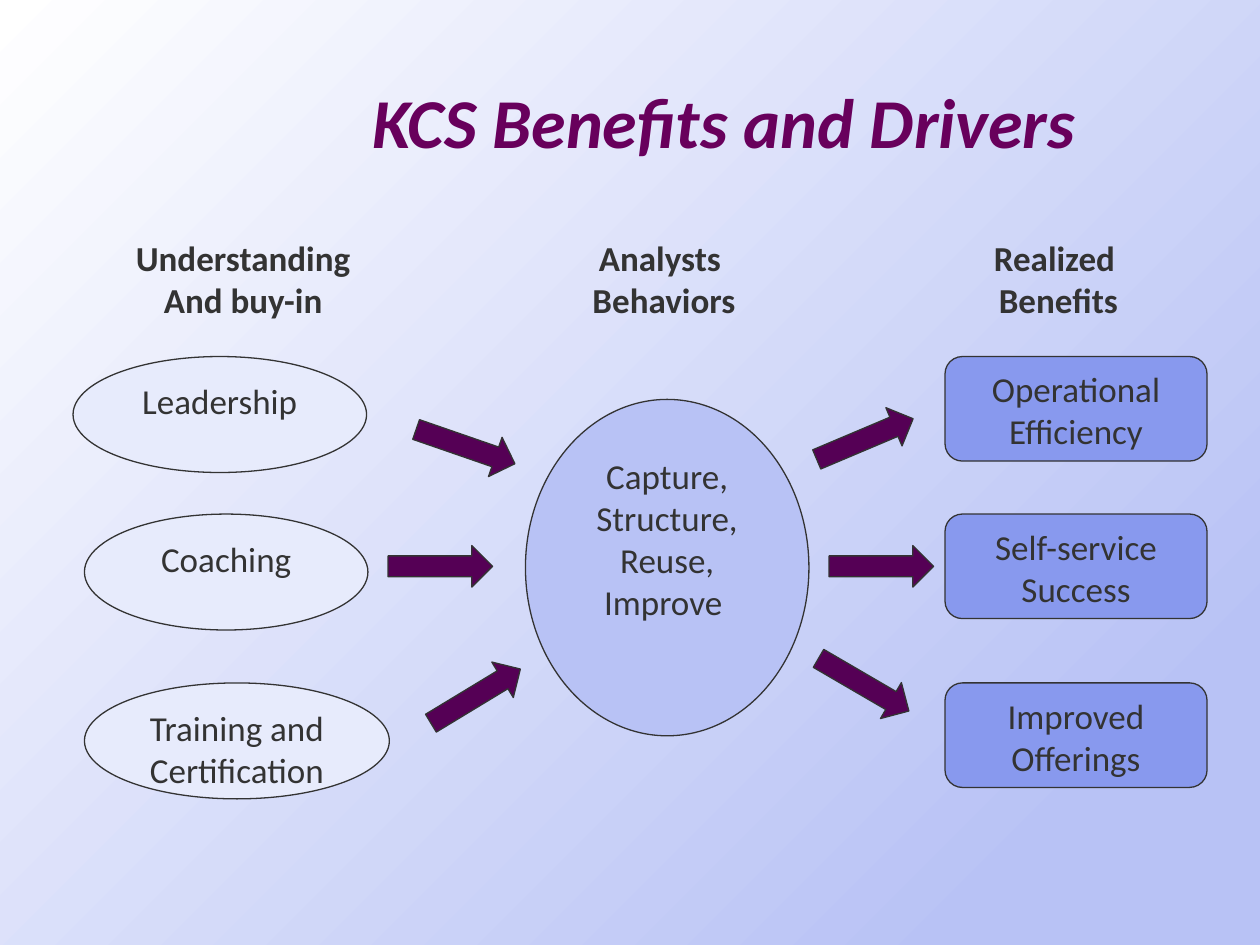
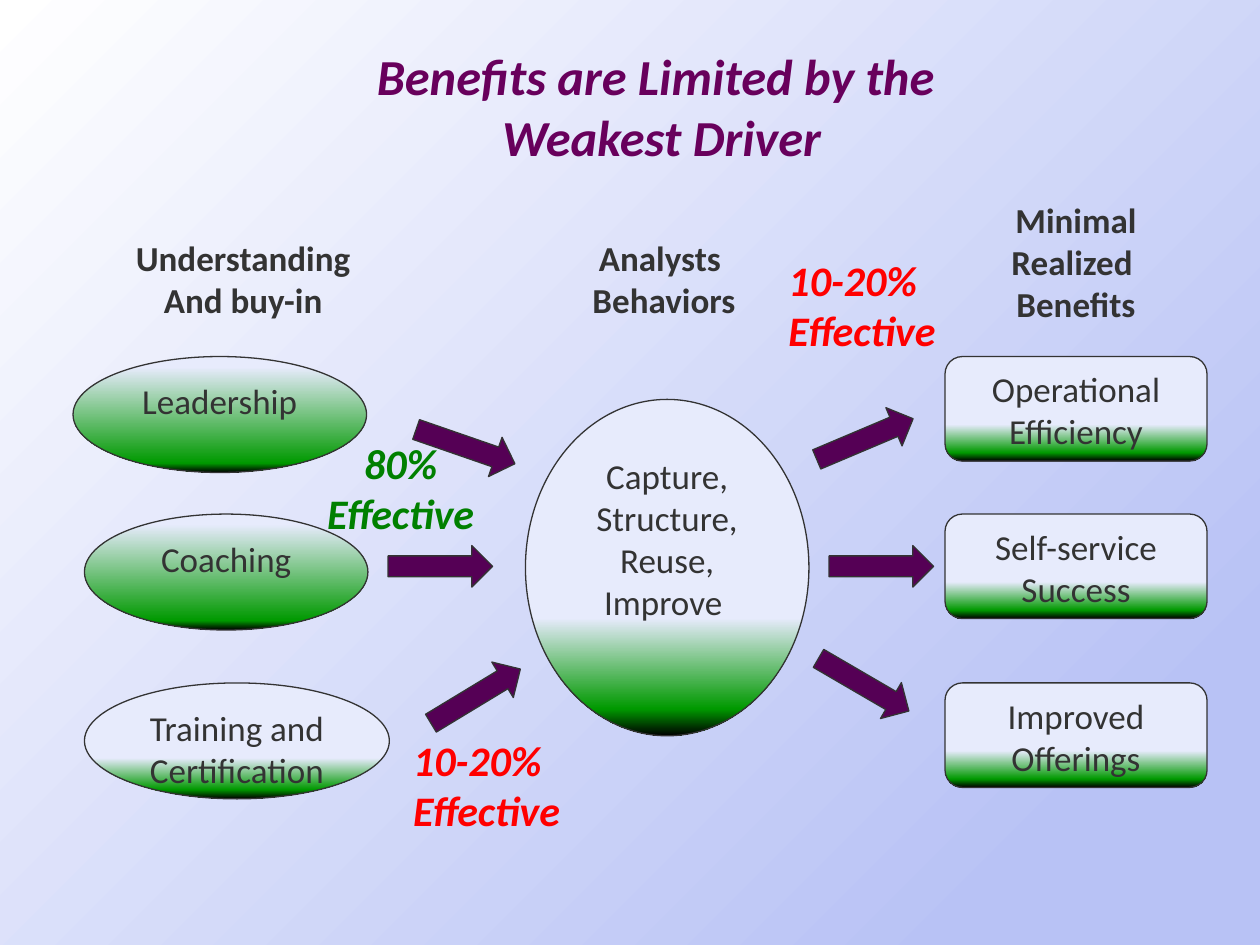
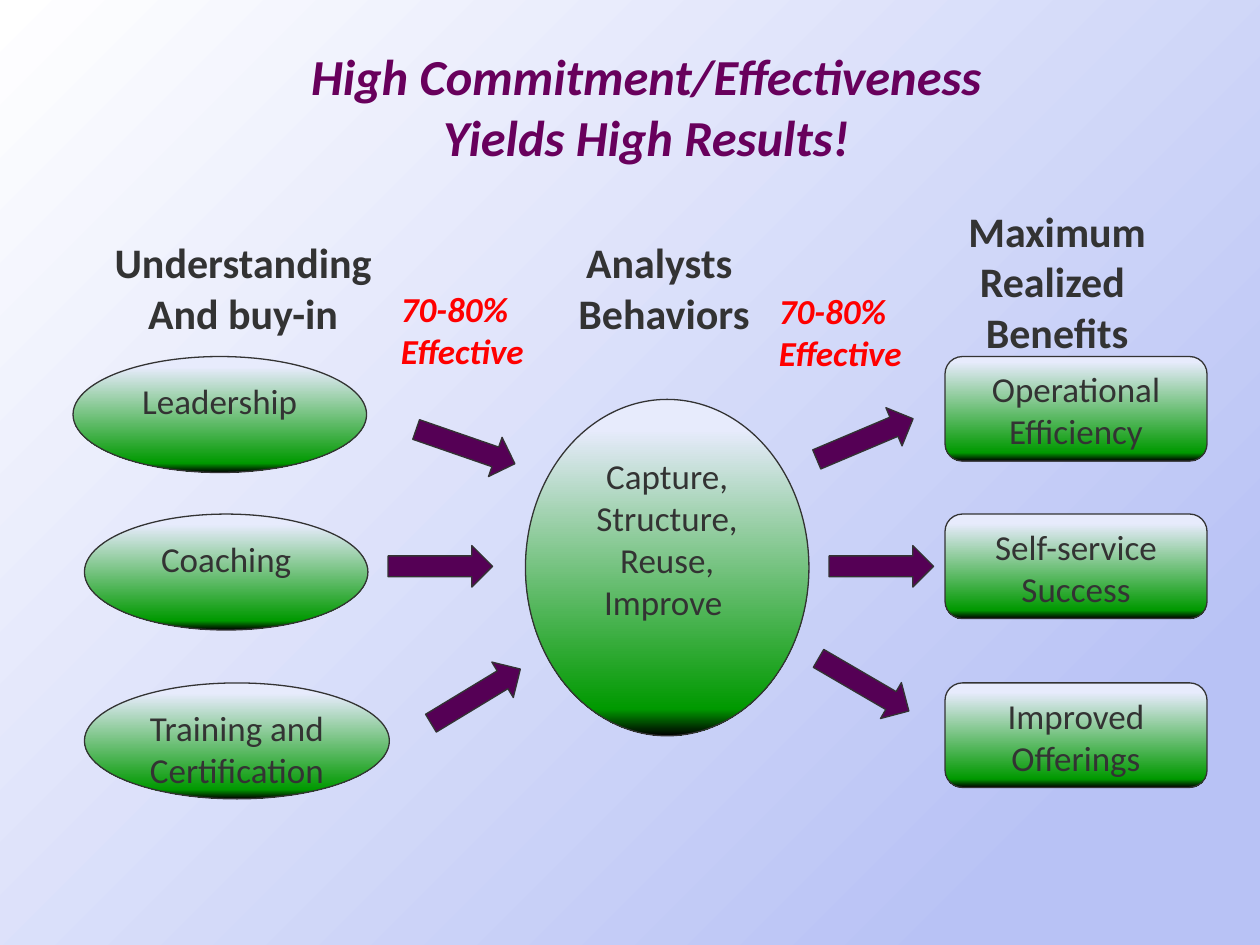
"""Build three slides on the drivers and benefits of KCS."""
from dataclasses import dataclass

from lxml.etree import SubElement
from pptx import Presentation
from pptx.dml.color import RGBColor
from pptx.enum.shapes import MSO_SHAPE
from pptx.enum.text import MSO_ANCHOR, MSO_AUTO_SIZE, PP_ALIGN
from pptx.oxml.ns import qn
from pptx.util import Inches, Pt


@dataclass(frozen=True)
class Theme:
    font: str = "Calibri"
    title: str = "68005C"
    text: str = "333333"
    arrow: str = "550055"
    benefit: str = "8899EE"
    behavior: str = "B8C2F5"
    driver: str = "E7EBFC"
    level: str = "009900"
    base: str = "000000"
    page: str = "FFFFFF"
    strong: str = "008000"
    alert: str = "FF0000"
    title_size: float = 40
    long_title_size: float = 28.8
    body_size: float = 20
    large_size: float = 24


THEME = Theme()


@dataclass(frozen=True)
class Box:
    left: float
    top: float
    width: float
    height: float


@dataclass(frozen=True)
class Gradient:
    stops: tuple[tuple[int, str], ...]
    from_corner: bool = False


Fill = str | Gradient


@dataclass(frozen=True)
class Node:
    text: str
    box: Box


@dataclass(frozen=True)
class Arrow:
    left: float
    top: float
    angle: float = 0


@dataclass(frozen=True)
class Label:
    text: str
    center: float
    top: float
    em_width: float
    size: float = THEME.body_size
    color: str = THEME.text
    italic: bool = False
    align: PP_ALIGN = PP_ALIGN.CENTER


@dataclass(frozen=True)
class DriverSlide:
    title: str
    title_box: Box
    title_size: float
    driver_fills: tuple[Fill, ...]
    behavior_fill: Fill
    benefit_fills: tuple[Fill, ...]
    labels: tuple[Label, ...]


ROWS = (2.83, 4.08, 5.42)
DRIVERS = (
    Node("Leadership", Box(0.58, ROWS[0], 2.33, 0.92)),
    Node("Coaching", Box(0.67, ROWS[1], 2.25, 0.92)),
    Node("Training and Certification", Box(0.67, ROWS[2], 2.42, 0.92)),
)
BEHAVIOR = Node("Capture, Structure, Reuse, Improve ", Box(4.17, 3.17, 2.25, 2.67))
BENEFITS = tuple(
    Node(text, Box(7.5, top, 2.08, 0.83))
    for text, top in zip(
        ("Operational Efficiency", "Self-service\nSuccess", "Improved\nOfferings"), ROWS
    )
)
ARROWS = (
    Arrow(3.28, 3.38, 19.1),
    Arrow(3.08, 4.33),
    Arrow(3.36, 5.36, 328.8),
    Arrow(6.45, 3.32, 337.1),
    Arrow(6.58, 4.33),
    Arrow(6.44, 5.27, 30.2),
)


def filled_from(start: int) -> Gradient:
    """Return a green level whose fade begins at the given percentage."""
    return Gradient(
        ((0, THEME.driver), (start, THEME.driver), (92, THEME.level), (100, THEME.base))
    )


def headings(
    benefits: str, center: float, top: float, em_width: float, size: float = THEME.body_size
) -> tuple[Label, ...]:
    """Return the three column headings, with the last one as given."""
    return (
        Label("Understanding\nAnd buy-in", 1.93, 1.83, 6.59, size),
        Label("Analysts \nBehaviors", 5.27, 1.83, 4.28, size),
        Label(benefits, center, top, em_width, size),
    )


def effect(
    share: str,
    center: float,
    top: float,
    size: float,
    color: str = THEME.alert,
    align: PP_ALIGN = PP_ALIGN.LEFT,
) -> Label:
    """Return an italic note on how effective a part is."""
    return Label(f"{share}\nEffective", center, top, 4.08, size, color, True, align)


LOW, HIGH = filled_from(65), filled_from(9)
SLIDES = (
    DriverSlide(
        "KCS Benefits and Drivers",
        Box(2.33, 0.33, 6.83, 1.25),
        THEME.title_size,
        (THEME.driver,) * 3,
        THEME.behavior,
        (THEME.benefit,) * 3,
        headings("Realized \nBenefits", 8.4, 1.83, 3.78),
    ),
    DriverSlide(
        "Benefits are Limited by the \nWeakest Driver",
        Box(1.5, 0.38, 7.5, 0.92),
        THEME.long_title_size,
        (HIGH, HIGH, LOW),
        LOW,
        (LOW,) * 3,
        headings("Minimal\nRealized \nBenefits", 8.54, 1.53, 3.78)
        + (
            effect("10-20%", 3.96, 5.78, THEME.large_size),
            effect("10-20%", 6.94, 1.97, THEME.large_size),
            effect("80%", 3.18, 3.42, THEME.large_size, THEME.strong, PP_ALIGN.CENTER),
        ),
    ),
    DriverSlide(
        "High Commitment/Effectiveness\nYields High Results!",
        Box(1.38, 0.38, 7.5, 0.92),
        THEME.long_title_size,
        (HIGH,) * 3,
        HIGH,
        (filled_from(5), HIGH, HIGH),
        headings("Maximum\nRealized \nBenefits", 8.39, 1.58, 4.44, THEME.large_size)
        + (
            effect("70-80%", 3.75, 2.23, THEME.body_size),
            effect("70-80%", 6.75, 2.25, THEME.body_size),
        ),
    ),
)


def inches(box: Box) -> tuple[Inches, ...]:
    """Return the box as left, top, width and height lengths."""
    return tuple(map(Inches, (box.left, box.top, box.width, box.height)))


def write_text(
    frame,
    text: str,
    *,
    size: float = THEME.body_size,
    color: str = THEME.text,
    bold: bool = False,
    italic: bool = False,
    align: PP_ALIGN = PP_ALIGN.CENTER,
    anchor: MSO_ANCHOR = MSO_ANCHOR.TOP,
    wrap: bool = True,
    auto_size: MSO_AUTO_SIZE = MSO_AUTO_SIZE.NONE,
) -> None:
    """Fill a text frame, one paragraph a line, in the given format."""
    frame.text = text
    frame.word_wrap = wrap
    frame.auto_size = auto_size
    frame.vertical_anchor = anchor
    for paragraph in frame.paragraphs:
        paragraph.alignment = align
        for run in paragraph.runs:
            run.font.name = THEME.font
            run.font.size = Pt(size)
            run.font.bold = bold
            run.font.italic = italic
            run.font.color.rgb = RGBColor.from_string(color)


def paint(owner, fill: Fill) -> None:
    """Fill a shape or a background with a colour or a gradient."""
    owner.fill.solid()
    if isinstance(fill, str):
        owner.fill.fore_color.rgb = RGBColor.from_string(fill)


def paint_gradient(element, gradient: Gradient) -> None:
    """Turn the first solid fill of an element into a gradient."""
    solid = next(element.iter(qn("a:solidFill")))
    parent = solid.getparent()
    grad = SubElement(parent, qn("a:gradFill"), rotWithShape="1")
    parent.replace(solid, grad)
    stops = SubElement(grad, qn("a:gsLst"))
    for position, color in gradient.stops:
        stop = SubElement(stops, qn("a:gs"), pos=str(position * 1000))
        SubElement(stop, qn("a:srgbClr"), val=color)
    if gradient.from_corner:
        route = SubElement(grad, qn("a:path"), {"path": "circle"})
        SubElement(route, qn("a:fillToRect"), l="100000", t="100000")
    else:
        SubElement(grad, qn("a:lin"), ang="5400000", scaled="1")


def add_outlined(slide, preset: MSO_SHAPE, box: Box, fill: Fill):
    """Add a preset shape with a thin dark outline and no shadow."""
    shape = slide.shapes.add_shape(preset, *inches(box))
    shape.shadow.inherit = False
    paint(shape, fill)
    if isinstance(fill, Gradient):
        paint_gradient(shape.element, fill)
    shape.line.color.rgb = RGBColor.from_string(THEME.text)
    shape.line.width = Pt(0.75)
    return shape


def add_node(slide, preset: MSO_SHAPE, node: Node, fill: Fill) -> None:
    """Add a shape that carries the text of a node."""
    write_text(add_outlined(slide, preset, node.box, fill).text_frame, node.text)


def add_arrow(slide, arrow: Arrow) -> None:
    """Add a block arrow turned by its angle."""
    box = Box(arrow.left, arrow.top, 0.83, 0.33)
    add_outlined(slide, MSO_SHAPE.RIGHT_ARROW, box, THEME.arrow).rotation = arrow.angle


def add_label(slide, label: Label) -> None:
    """Add a bold label sized to its lines and type size."""
    width = label.em_width * label.size / 72 + 0.2
    height = len(label.text.split("\n")) * label.size * 1.2 / 72 + 0.1
    box = Box(label.center - width / 2, label.top, width, height)
    write_text(
        slide.shapes.add_textbox(*inches(box)).text_frame,
        label.text,
        size=label.size,
        color=label.color,
        bold=True,
        italic=label.italic,
        align=label.align,
        wrap=False,
        auto_size=MSO_AUTO_SIZE.SHAPE_TO_FIT_TEXT,
    )


def add_driver_slide(deck, content: DriverSlide) -> None:
    """Add one slide that leads from drivers to benefits."""
    slide = deck.slides.add_slide(deck.slide_layouts.get_by_name("Title Only"))
    title = slide.shapes.title
    title.left, title.top, title.width, title.height = inches(content.title_box)
    write_text(
        title.text_frame,
        content.title,
        size=content.title_size,
        color=THEME.title,
        bold=True,
        italic=True,
        anchor=MSO_ANCHOR.MIDDLE,
    )
    for benefit, fill in zip(BENEFITS, content.benefit_fills):
        add_node(slide, MSO_SHAPE.ROUNDED_RECTANGLE, benefit, fill)
    for driver, fill in zip(DRIVERS, content.driver_fills):
        add_node(slide, MSO_SHAPE.OVAL, driver, fill)
    add_node(slide, MSO_SHAPE.OVAL, BEHAVIOR, content.behavior_fill)
    for arrow in ARROWS:
        add_arrow(slide, arrow)
    for label in content.labels:
        add_label(slide, label)


def main() -> None:
    """Build the deck and save it."""
    deck = Presentation()
    deck.slide_width, deck.slide_height = Inches(10), Inches(7.5)
    backdrop = Gradient(((14, THEME.behavior), (100, THEME.page)), from_corner=True)
    paint(deck.slide_master.background, backdrop)
    paint_gradient(deck.slide_master.element, backdrop)
    for content in SLIDES:
        add_driver_slide(deck, content)
    deck.save("out.pptx")


if __name__ == "__main__":
    main()
